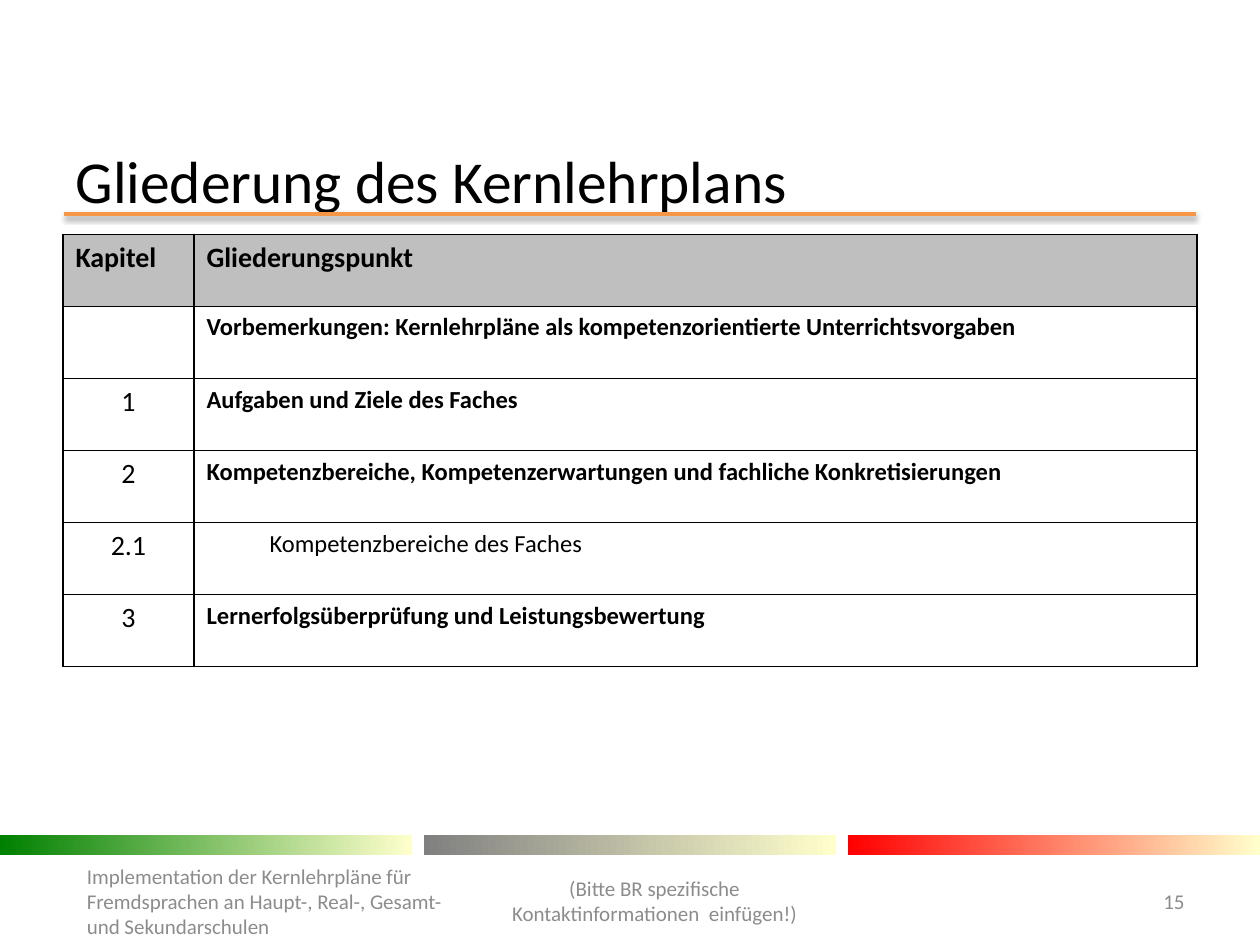
from lxml import etree
from pptx import Presentation
from pptx.dml.color import RGBColor
from pptx.enum import shapes, text
from pptx.oxml import ns
from pptx.util import Pt

BLACK = RGBColor(0x00, 0x00, 0x00)
GRAY = RGBColor(0x8C, 0x8C, 0x8C)
HEAD = RGBColor(0xBF, 0xBF, 0xBF)
ORANGE = RGBColor(0xF7, 0x96, 0x46)
CREAM = RGBColor(0xFF, 0xFF, 0xCC)
BARS = [
    RGBColor(0x00, 0x80, 0x00),
    RGBColor(0x80, 0x80, 0x80),
    RGBColor(0xFF, 0x00, 0x00),
]
LEFT, CENTER, RIGHT = text.PP_ALIGN.LEFT, text.PP_ALIGN.CENTER, text.PP_ALIGN.RIGHT


def sub(node, tag, **attrs):
    return etree.SubElement(node, ns.qn(tag), **attrs)


def style(par, size, color, bold=False, align=LEFT):
    par.alignment = align
    for run in par.runs:
        run.font.name = "Calibri"
        run.font.size = Pt(size)
        run.font.bold = bold
        run.font.color.rgb = color


prs = Presentation()
prs.slide_width, prs.slide_height = Pt(720), Pt(540)
slide = prs.slides.add_slide(prs.slide_layouts[5])

rule = slide.shapes.add_connector(
    shapes.MSO_CONNECTOR.STRAIGHT, Pt(36.72), Pt(122.4), Pt(683.28), Pt(122.4))
rule.line.color.rgb = ORANGE
rule.line.width = Pt(2)
glow = sub(sub(rule._element.spPr, "a:effectLst"), "a:outerShdw",
           blurRad=str(Pt(3.1)), dist=str(Pt(1.6)), dir="5400000", rotWithShape="0")
sub(sub(glow, "a:srgbClr", val="000000"), "a:alpha", val="38000")

wide = 235.44
for i, color in enumerate(BARS):
    bar = slide.shapes.add_shape(
        shapes.MSO_SHAPE.RECTANGLE,
        Pt(i * (720 - wide) / 2), Pt(477.36), Pt(wide), Pt(11.52))
    bar.shadow.inherit = False
    bar.line.fill.background()
    bar.fill.gradient()
    bar.fill.gradient_angle = 0
    for stop, tone in zip(bar.fill.gradient_stops, (color, CREAM)):
        stop.color.rgb = tone

title = slide.shapes.title
title.left, title.top, title.width, title.height = Pt(36), Pt(88.56), Pt(648), Pt(28.08)
title.text_frame.text = "Gliederung des Kernlehrplans"
title.text_frame.vertical_anchor = text.MSO_ANCHOR.MIDDLE
title.text_frame.auto_size = text.MSO_AUTO_SIZE.NONE
style(title.text_frame.paragraphs[0], 34, BLACK)

rows = [
    ("Kapitel", "Gliederungspunkt"),
    ("", "Vorbemerkungen: Kernlehrpläne als kompetenzorientierte Unterrichtsvorgaben"),
    ("1", "Aufgaben und Ziele des Faches"),
    ("2", "Kompetenzbereiche, Kompetenzerwartungen und fachliche Konkretisierungen"),
    ("2.1", "Kompetenzbereiche des Faches"),
    ("3", "Lernerfolgsüberprüfung und Leistungsbewertung"),
]
grid = slide.shapes.add_table(
    len(rows), 2, Pt(36), Pt(133.92), Pt(648), Pt(246.96)).table
grid.first_row = grid.horz_banding = False
grid.columns[0].width, grid.columns[1].width = Pt(74.88), Pt(573.12)
for r, row in enumerate(rows):
    for c, words in enumerate(row):
        cell = grid.cell(r, c)
        props = cell._tc.get_or_add_tcPr()
        for side in ("a:lnL", "a:lnR", "a:lnT", "a:lnB"):
            edge = sub(props, side, w=str(Pt(1)))
            sub(sub(edge, "a:solidFill"), "a:srgbClr", val=str(BLACK))
        if r == 0:
            cell.fill.solid()
            cell.fill.fore_color.rgb = HEAD
        else:
            cell.fill.background()
        cell.text_frame.text = words
        par = cell.text_frame.paragraphs[0]
        nested = "." in row[0]
        if r == 0:
            style(par, 16, BLACK, True)
        elif c == 0:
            style(par, 16, BLACK, align=CENTER)
        else:
            style(par, 14, BLACK, not nested)
            if nested:
                par.level = 1
                par._p.get_or_add_pPr().set("marL", str(Pt(36)))

feet = [
    (637.92, 500.4, 46.08, 28.8, "15", RIGHT),
    (42.48, 490.32, 226.8, 48.96,
     "Implementation der Kernlehrpläne für Fremdsprachen an Haupt-, Real-, "
     "Gesamt- und Sekundarschulen", LEFT),
    (269.28, 488.88, 209.52, 51.12,
     "(Bitte BR spezifische Kontaktinformationen  einfügen!)", CENTER),
]
for x, y, w, h, words, align in feet:
    frame = slide.shapes.add_textbox(Pt(x), Pt(y), Pt(w), Pt(h)).text_frame
    frame.word_wrap = True
    frame.vertical_anchor = text.MSO_ANCHOR.MIDDLE
    frame.text = words
    style(frame.paragraphs[0], 12, GRAY, align=align)

prs.save("out.pptx")
